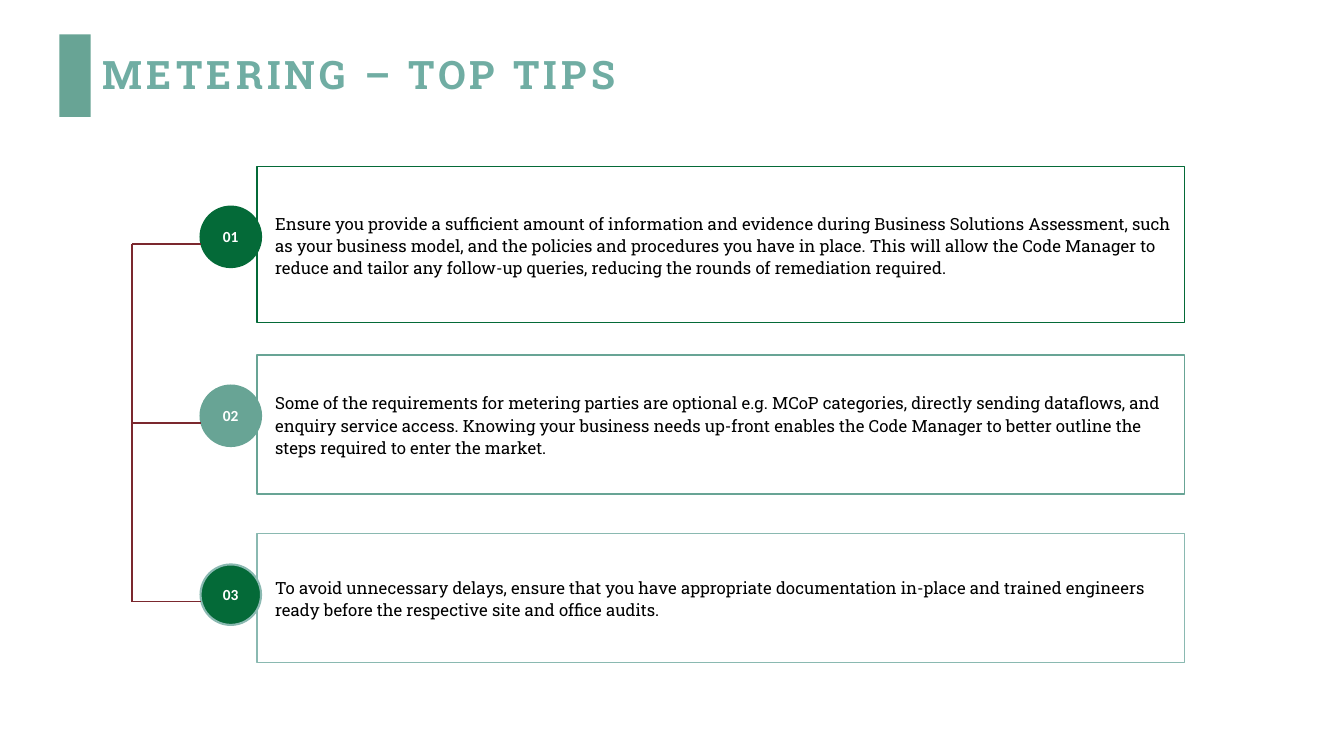
from dataclasses import dataclass

from lxml.etree import SubElement
from pptx import Presentation
from pptx.dml.color import RGBColor
from pptx.enum.shapes import MSO_CONNECTOR, MSO_SHAPE
from pptx.enum.text import MSO_ANCHOR, PP_ALIGN
from pptx.oxml.ns import qn
from pptx.shapes.autoshape import Shape
from pptx.slide import Slide
from pptx.util import Inches, Pt

SLIDE_WIDTH, SLIDE_HEIGHT = Inches(13.33), Inches(7.5)
COLUMN, ROW = SLIDE_WIDTH / 160, SLIDE_HEIGHT / 90

COLORS = {
    "title": "70ADA3",
    "sage": "68A495",
    "forest": "046A38",
    "mist": "8AB9B1",
    "maroon": "7B282E",
    "black": "000000",
    "white": "FFFFFF",
}
SLAB, SANS = "Roboto Slab", "Calibri"

CARD_LEFT, CARD_WIDTH = 30.6, 110.4
BADGE_LEFT, BADGE_SIZE = 23.88, 7.2
FIRST_BADGE_TOP, FIRST_BRANCH, TIP_PITCH = 24.6, 29.04, 21.3
TRUNK = 15.72


@dataclass(frozen=True)
class Area:
    left: float
    top: float
    width: float
    height: float

    def emu(self) -> tuple[int, int, int, int]:
        return (round(self.left * COLUMN), round(self.top * ROW),
                round(self.width * COLUMN), round(self.height * ROW))


@dataclass(frozen=True)
class Tip:
    top: float
    height: float
    badge_fill: str
    outline: str
    advice: str


TIPS = [
    Tip(19.8, 18.6, "forest", "forest",
        "Ensure you provide a sufficient amount of information and evidence during "
        "Business Solutions Assessment, such as your business model, and the policies "
        "and procedures you have in place. This will allow the Code Manager to reduce "
        "and tailor any follow-up queries, reducing the rounds of remediation required."),
    Tip(42.24, 16.56, "sage", "sage",
        "Some of the requirements for metering parties are optional e.g. MCoP "
        "categories, directly sending dataflows, and enquiry service access. Knowing "
        "your business needs up-front enables the Code Manager to better outline the "
        "steps required to enter the market."),
    Tip(63.48, 15.36, "forest", "mist",
        "To avoid unnecessary delays, ensure that you have appropriate documentation "
        "in-place and trained engineers ready before the respective site and office "
        "audits."),
]


def rgb(color: str) -> RGBColor:
    return RGBColor.from_string(COLORS[color])


def add_panel(slide: Slide, kind: MSO_SHAPE, area: Area, fill: str | None = None,
              outline: str | None = None, weight: float = 1) -> Shape:
    panel = slide.shapes.add_shape(kind, *area.emu())
    panel.shadow.inherit = False
    if fill:
        panel.fill.solid()
        panel.fill.fore_color.rgb = rgb(fill)
    else:
        panel.fill.background()
    if outline:
        panel.line.color.rgb = rgb(outline)
        panel.line.width = Pt(weight)
    else:
        panel.line.fill.background()
    return panel


def write(shape: Shape, wording: str, font_name: str, size: float, color: str,
          bold: bool = False, align: PP_ALIGN = PP_ALIGN.LEFT, spacing: float = 1.0,
          insets: tuple[float, float, float, float] = (0, 0, 0, 0)) -> None:
    frame = shape.text_frame
    frame.text = wording
    frame.word_wrap = True
    frame.vertical_anchor = MSO_ANCHOR.MIDDLE
    (frame.margin_left, frame.margin_top,
     frame.margin_right, frame.margin_bottom) = map(Inches, insets)
    paragraph = frame.paragraphs[0]
    paragraph.alignment = align
    paragraph.line_spacing = spacing
    font = paragraph.runs[0].font
    font.name, font.size, font.bold = font_name, Pt(size), bold
    font.color.rgb = rgb(color)


def add_rule(slide: Slide, start: tuple[float, float], end: tuple[float, float]) -> None:
    points = [round(value) for column, row in (start, end)
              for value in (column * COLUMN, row * ROW)]
    rule = slide.shapes.add_connector(MSO_CONNECTOR.STRAIGHT, *points)
    rule.line.color.rgb = rgb("maroon")
    rule.line.width = Pt(1)
    SubElement(rule._element.spPr, qn("a:effectLst"))


def add_heading(slide: Slide) -> None:
    add_panel(slide, MSO_SHAPE.RECTANGLE, Area(7.08, 4.08, 3.72, 9.84), fill="sage")
    title = slide.shapes.title
    title.left, title.top, title.width, title.height = Area(11.04, 4.8, 121.8, 8.64).emu()
    write(title, "METERING – TOP TIPS", SLAB, 28, "title", bold=True, spacing=0.9,
          insets=(0.1, 0.05, 0.1, 0.05))
    title.text_frame.paragraphs[0].runs[0].font._element.set("spc", "300")


def add_tip(slide: Slide, index: int, tip: Tip) -> None:
    card = add_panel(slide, MSO_SHAPE.RECTANGLE,
                     Area(CARD_LEFT, tip.top, CARD_WIDTH, tip.height), outline=tip.outline)
    write(card, tip.advice, SLAB, 12, "black", spacing=1.1,
          insets=(0.18, 0.06, 0.08, 0.06))
    badge_top = FIRST_BADGE_TOP + index * TIP_PITCH
    badge = add_panel(slide, MSO_SHAPE.OVAL,
                      Area(BADGE_LEFT, badge_top, BADGE_SIZE, BADGE_SIZE),
                      fill=tip.badge_fill, outline=tip.outline, weight=1.5)
    write(badge, f"{index + 1:02}", SANS, 11, "white", bold=True, align=PP_ALIGN.CENTER)


def add_bracket(slide: Slide) -> None:
    branches = [FIRST_BRANCH + index * TIP_PITCH for index in range(len(TIPS))]
    add_rule(slide, (TRUNK, branches[0]), (TRUNK, branches[-1]))
    for branch in branches:
        add_rule(slide, (TRUNK, branch), (BADGE_LEFT, branch))


def main() -> None:
    presentation = Presentation()
    presentation.slide_width, presentation.slide_height = SLIDE_WIDTH, SLIDE_HEIGHT
    slide = presentation.slides.add_slide(presentation.slide_layouts[5])
    add_heading(slide)
    for index, tip in enumerate(TIPS):
        add_tip(slide, index, tip)
    add_bracket(slide)
    presentation.save("out.pptx")


if __name__ == "__main__":
    main()
